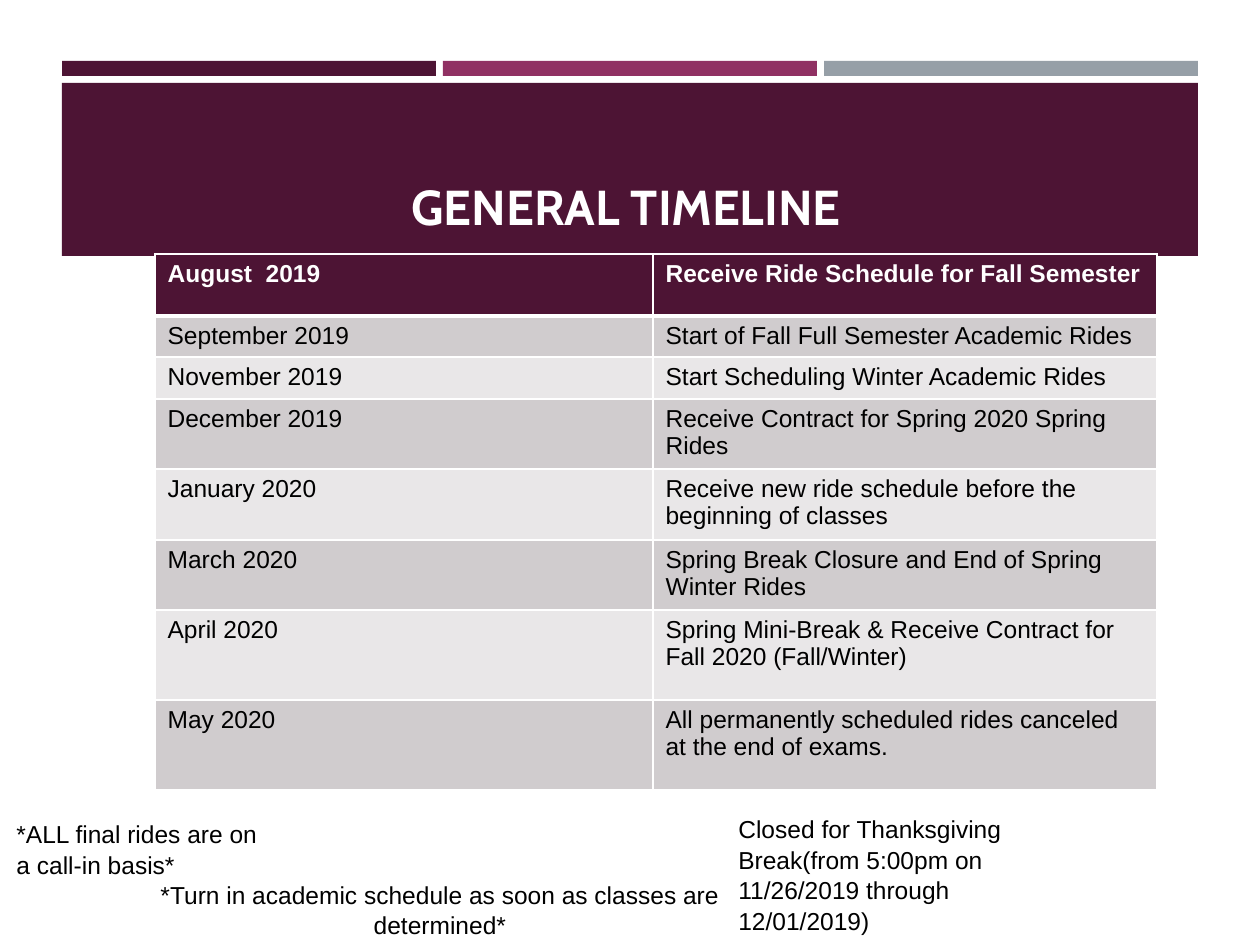
from lxml.etree import SubElement
from pptx import Presentation
from pptx.dml.color import RGBColor
from pptx.enum.shapes import MSO_SHAPE
from pptx.enum.text import MSO_ANCHOR as Anchor, MSO_AUTO_SIZE as AutoSize, PP_ALIGN as Align
from pptx.oxml.ns import qn
from pptx.util import Emu, Pt

PLUM, BERRY, GRAY = "4D1434", "903163", "969FA7"
WHITE, BLACK = "FFFFFF", "000000"
BANDS = ("D0CCCE", "E9E7E8")
COLUMNS = (498, 504)
TIMELINE = [
    (62, "August  2019", "Receive Ride Schedule for Fall Semester"),
    (41, "September 2019", "Start of Fall Full Semester Academic Rides"),
    (42, "November 2019", "Start Scheduling Winter Academic Rides"),
    (70, "December 2019", "Receive Contract for Spring 2020 Spring Rides"),
    (71, "January 2020", "Receive new ride schedule before the beginning of classes"),
    (70, "March 2020", "Spring Break Closure and End of Spring Winter Rides"),
    (90, "April 2020", "Spring Mini-Break & Receive Contract for Fall 2020 (Fall/Winter)"),
    (90, "May 2020", "All permanently scheduled rides canceled at the end of exams."),
]
NOTES = [
    ((726, 806, 367, 131), Align.LEFT,
     "Closed for Thanksgiving Break(from 5:00pm on 11/26/2019 through 12/01/2019)"),
    ((4, 811, 273, 72), Align.LEFT, "*ALL final rides are on a call-in basis*"),
    ((125, 872, 630, 72), Align.CENTER,
     "*Turn in academic schedule as soon as classes are determined*"),
]


def px(n):
    """Turn pixels into EMU."""
    return Emu(round(n * 914400 / 126))


def rgb(color):
    """Turn a hex string into a colour."""
    return RGBColor.from_string(color)


def add_run(p, text, size=14, color=BLACK, bold=False, font="Arial"):
    """Add one formatted run to a paragraph."""
    r = p.add_run()
    r.text = text
    r.font.name, r.font.size, r.font.bold = font, Pt(size), bold
    r.font.color.rgb = rgb(color)


def add_rect(s, box, color):
    """Add a plain filled rectangle."""
    sp = s.shapes.add_shape(MSO_SHAPE.RECTANGLE, *map(px, box))
    sp.shadow.inherit = False
    sp.fill.solid()
    sp.fill.fore_color.rgb = rgb(color)
    sp.line.fill.background()


def add_header(s, box):
    """Add the three bars, the band below them and the title."""
    x, y, w, h = box
    gap, bar_h, band_y = 7, 15, 22
    bar_w = (w - 2 * gap) // 3
    for i, color in enumerate((PLUM, BERRY, GRAY)):
        add_rect(s, (x + i * (bar_w + gap), y, bar_w, bar_h), color)
    add_rect(s, (x, y + band_y, w, h - band_y), PLUM)

    title = s.shapes.title
    title.element.getparent().append(title.element)
    title.left, title.top = px(x + 19), px(y + 33)
    title.width, title.height = px(w - 35), px(h - 47)
    tf = title.text_frame
    tf.auto_size, tf.vertical_anchor = AutoSize.NONE, Anchor.BOTTOM
    p = tf.paragraphs[0]
    p.alignment = Align.CENTER
    add_run(p, "GENERAL TIMELINE ", 28, WHITE, True, "Cabin")


def set_borders(cell, top, bottom):
    """Give a cell white borders, with the top and bottom widths in points."""
    tc_pr = cell._tc.get_or_add_tcPr()
    for side, width in (("L", 1), ("R", 1), ("T", top), ("B", bottom)):
        ln = SubElement(tc_pr, qn(f"a:ln{side}"), w=str(Pt(width)))
        fill = SubElement(ln, qn("a:solidFill"))
        SubElement(fill, qn("a:srgbClr"), val=WHITE)


def add_timeline(s, x, y):
    """Add the table of months and events."""
    width, height = sum(COLUMNS), sum(row[0] for row in TIMELINE)
    frame = s.shapes.add_table(len(TIMELINE), len(COLUMNS), px(x), px(y), px(width), px(height))
    table = frame.table
    for col, w in zip(table.columns, COLUMNS):
        col.width = px(w)
    for i, (h, *texts) in enumerate(TIMELINE):
        head = i == 0
        table.rows[i].height = px(h)
        for j, text in enumerate(texts):
            cell = table.cell(i, j)
            set_borders(cell, 3 if i == 1 else 1, 3 if head else 1)
            cell.fill.solid()
            cell.fill.fore_color.rgb = rgb(PLUM if head else BANDS[(i - 1) % 2])
            add_run(cell.text_frame.paragraphs[0], text, color=WHITE if head else BLACK, bold=head)


def add_note(s, box, align, text):
    """Add a wrapped note in the given box."""
    tf = s.shapes.add_textbox(*map(px, box)).text_frame
    tf.word_wrap, tf.auto_size = True, AutoSize.SHAPE_TO_FIT_TEXT
    p = tf.paragraphs[0]
    p.alignment, p.line_spacing = align, 1.05
    add_run(p, text)


def main():
    """Build the slide and save it."""
    prs = Presentation()
    prs.slide_width, prs.slide_height = px(1260), px(945)
    s = prs.slides.add_slide(prs.slide_layouts[5])
    add_header(s, (62, 61, 1136, 195))
    add_timeline(s, 155, 254)
    for note in NOTES:
        add_note(s, *note)
    prs.save("out.pptx")


if __name__ == "__main__":
    main()
